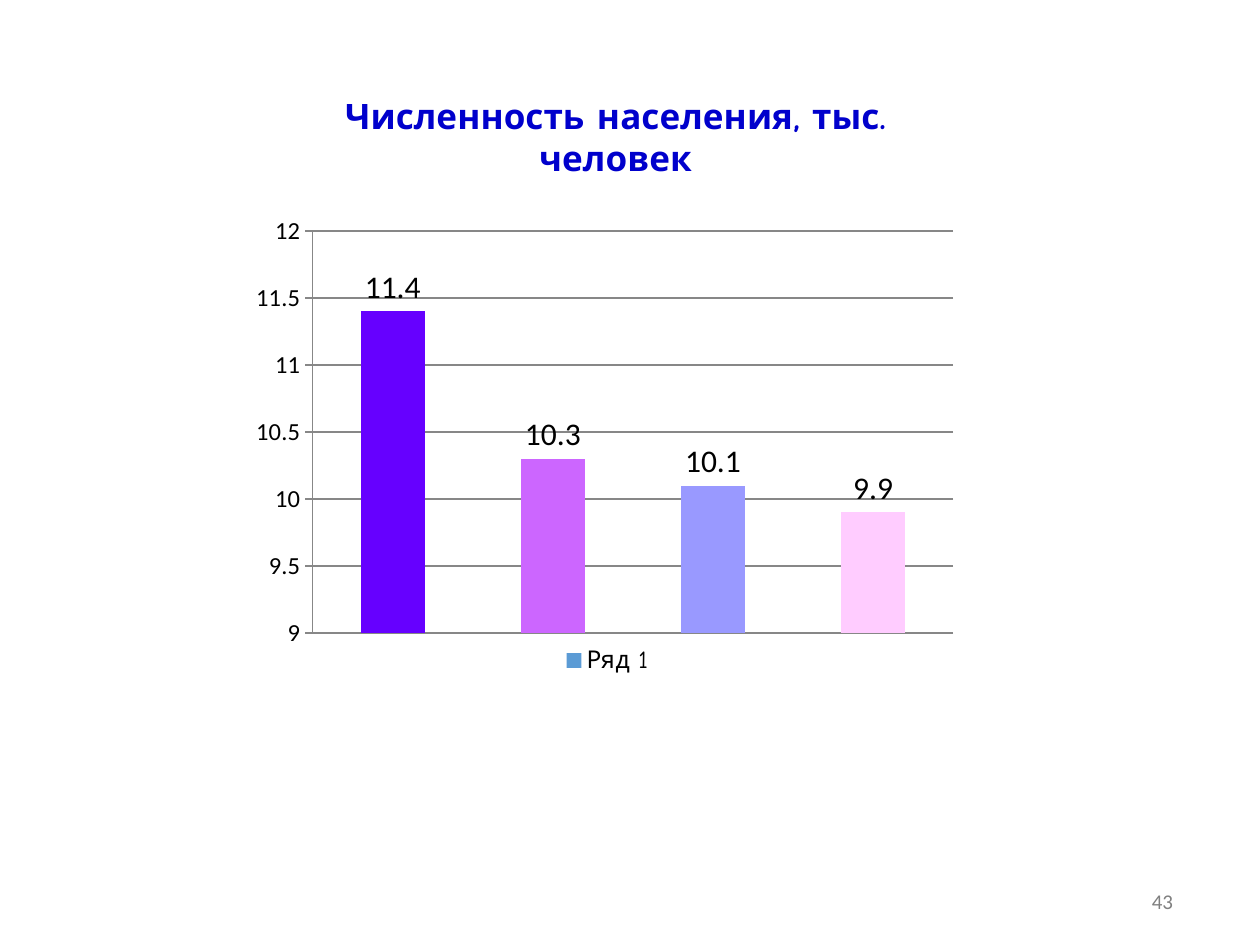
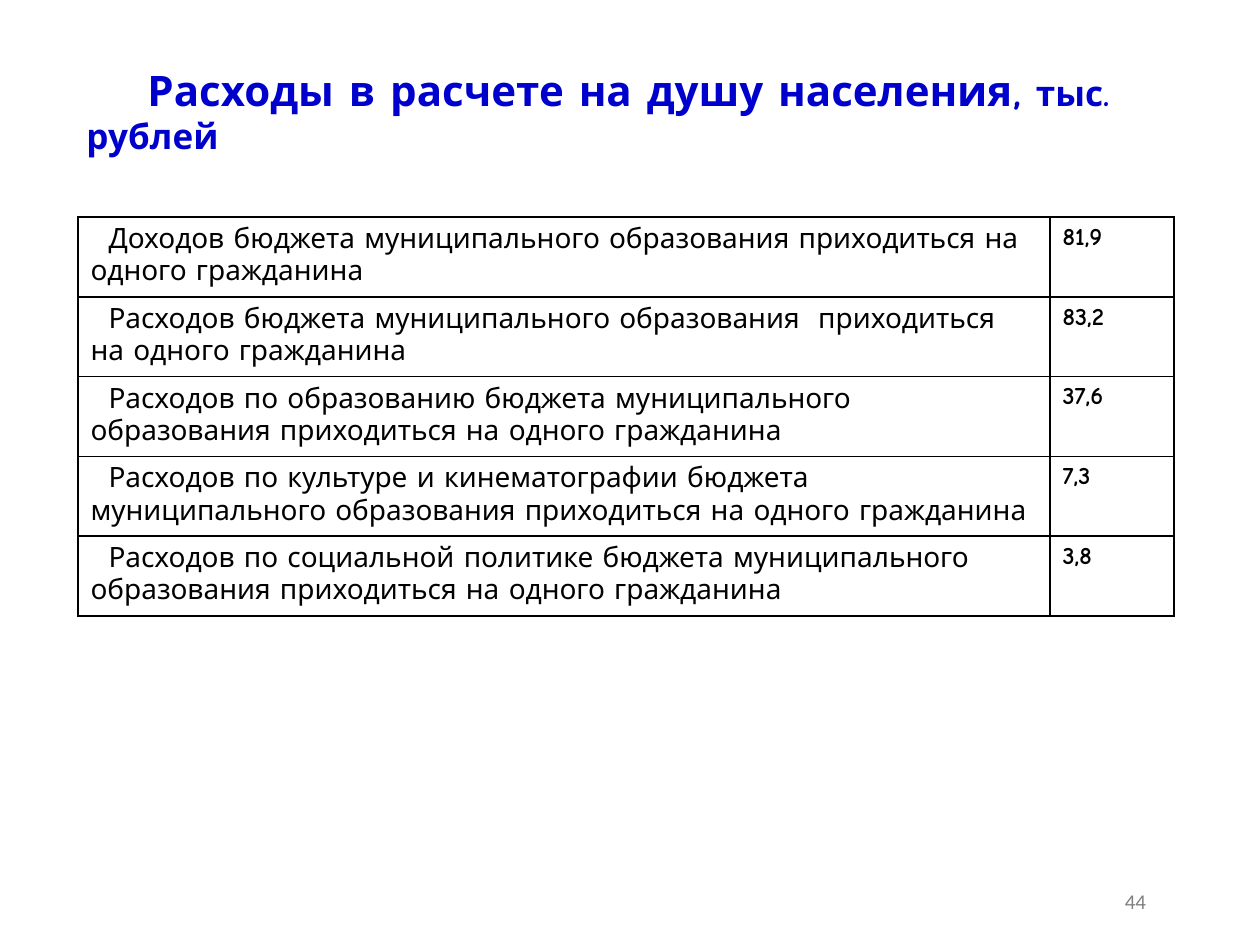
from lxml import etree
from pptx import Presentation
from pptx.chart.data import CategoryChartData
from pptx.dml.color import RGBColor
from pptx.enum.chart import (XL_CHART_TYPE, XL_LABEL_POSITION,
                             XL_LEGEND_POSITION, XL_TICK_MARK)
from pptx.enum.text import MSO_ANCHOR, PP_ALIGN
from pptx.oxml.ns import qn
from pptx.util import Pt

COLUMNS = XL_CHART_TYPE.COLUMN_CLUSTERED
LABEL_ABOVE = XL_LABEL_POSITION.OUTSIDE_END
LEGEND_BELOW = XL_LEGEND_POSITION.BOTTOM
TICK_CROSS = XL_TICK_MARK.CROSS
TOP, MIDDLE = MSO_ANCHOR.TOP, MSO_ANCHOR.MIDDLE
LEFT, CENTER, RIGHT = PP_ALIGN.LEFT, PP_ALIGN.CENTER, PP_ALIGN.RIGHT

# Shared style
PX = 914400 / 126
TITLE_FONT, BODY_FONT = "Comic Neue", "Calibri"
TITLE_BLUE, BLACK, GRAY, GRID_GRAY = "0000CC", "000000", "808080", "878787"
LEGEND_BLUE = "5B9BD5"

# Slide content
POPULATION = [(11.4, "6600FF"), (10.3, "CC66FF"), (10.1, "9999FF"), (9.9, "FFCCFF")]
PER_CITIZEN = [
    ("Доходов бюджета муниципального образования приходиться на одного гражданина", "81,9"),
    ("Расходов бюджета муниципального образования  приходиться на одного гражданина", "83,2"),
    ("Расходов по образованию бюджета муниципального образования "
     "приходиться на одного гражданина", "37,6"),
    ("Расходов по культуре и кинематографии бюджета муниципального образования "
     "приходиться на одного гражданина", "7,3"),
    ("Расходов по социальной политике бюджета муниципального образования "
     "приходиться на одного гражданина", "3,8"),
]


def px(length):
    return round(length * PX)


def color(value):
    return RGBColor.from_string(value)


def style_font(font, size, name, value, bold=False):
    font.size, font.name, font.bold = Pt(size), name, bold
    font.color.rgb = color(value)


def add_span(para, text, size, name=TITLE_FONT, value=BLACK, bold=False):
    span = para.add_run()
    span.text = text
    style_font(span.font, size, name, value, bold)


def indent_first_line(para, length):
    para._p.get_or_add_pPr().set("indent", str(px(length)))


def add_text(page, box, align=LEFT, anchor=TOP):
    """Add a wrapping text box and return its frame and first paragraph."""
    frame = page.shapes.add_textbox(*map(px, box)).text_frame
    frame.word_wrap, frame.vertical_anchor = True, anchor
    para = frame.paragraphs[0]
    para.alignment = align
    return frame, para


def add_title(page, box, spans, align=LEFT, indent=0):
    para = add_text(page, box, align)[1]
    indent_first_line(para, indent)
    for text, size in spans:
        add_span(para, text, size, value=TITLE_BLUE, bold=True)


def add_page_number(page, number, right):
    width = 284
    frame, para = add_text(page, (right - width, 876, width, 50), RIGHT, MIDDLE)
    frame.margin_left = frame.margin_right = 0
    add_span(para, str(number), 12, BODY_FONT, GRAY)


def set_layout(parent, index, **fractions):
    """Place a chart part by fractions of the chart area."""
    for old in parent.findall(qn("c:layout")):
        parent.remove(old)
    layout = etree.Element(qn("c:layout"))
    manual = etree.SubElement(layout, qn("c:manualLayout"))
    if "w" in fractions:
        etree.SubElement(manual, qn("c:layoutTarget"), val="inner")
    for mode in ("xMode", "yMode"):
        etree.SubElement(manual, qn(f"c:{mode}"), val="edge")
    for key, fraction in fractions.items():
        etree.SubElement(manual, qn(f"c:{key}"), val=str(fraction))
    parent.insert(index, layout)


def add_population_chart(page, box):
    data = CategoryChartData()
    data.categories = [str(number + 1) for number in range(len(POPULATION))]
    data.add_series("Ряд 1", [value for value, _ in POPULATION])
    chart = page.shapes.add_chart(COLUMNS, *map(px, box), data).chart
    chart.has_title = False
    style_font(chart.font, 18, BODY_FONT, BLACK)

    # Axes
    chart.category_axis.visible = False
    axis = chart.value_axis
    axis.minimum_scale, axis.maximum_scale, axis.major_unit = 9, 12, 0.5
    axis.major_tick_mark = TICK_CROSS
    axis.has_major_gridlines = True
    style_font(axis.tick_labels.font, 14, BODY_FONT, BLACK)
    for line in (axis.format.line, axis.major_gridlines.format.line):
        line.color.rgb = color(GRID_GRAY)
        line.width = Pt(0.75)

    # Columns and their labels
    plot = chart.plots[0]
    plot.gap_width, plot.vary_by_categories = 150, False
    series = plot.series[0]
    series.format.fill.solid()
    series.format.fill.fore_color.rgb = color(LEGEND_BLUE)
    for index, (_, fill_color) in enumerate(POPULATION):
        fill = series.points[index].format.fill
        fill.solid()
        fill.fore_color.rgb = color(fill_color)
    plot.has_data_labels = True
    labels = plot.data_labels
    labels.show_value, labels.position = True, LABEL_ABOVE
    style_font(labels.font, 18, BODY_FONT, BLACK)

    # Legend and plot position
    chart.has_legend = True
    legend = chart.legend
    legend.position, legend.include_in_layout = LEGEND_BELOW, False
    style_font(legend.font, 14, TITLE_FONT, BLACK)
    set_layout(legend._element, 1, x=0.42, y=0.74)
    set_layout(chart._chartSpace.chart.plotArea, 0, x=0.175, y=0.073, w=0.638, h=0.654)


def outline_cell(cell):
    properties = cell._tc.get_or_add_tcPr()
    for index, side in enumerate(("lnL", "lnR", "lnT", "lnB")):
        line = etree.Element(qn(f"a:{side}"), w=str(Pt(1)))
        fill = etree.SubElement(line, qn("a:solidFill"))
        etree.SubElement(fill, qn("a:srgbClr"), val=BLACK)
        properties.insert(index, line)


def add_expense_table(page, box):
    left, top, width, height = box
    value_width = 124
    table = page.shapes.add_table(len(PER_CITIZEN), 2, *map(px, box)).table
    table.first_row = table.horz_banding = False
    table.columns[0].width = px(width - value_width)
    table.columns[1].width = px(value_width)
    for row, (label, value) in zip(table.rows, PER_CITIZEN):
        row.height = px(height / len(PER_CITIZEN))
        for cell in row.cells:
            cell.fill.background()
            outline_cell(cell)
        label_para, value_para = (cell.text_frame.paragraphs[0] for cell in row.cells)
        indent_first_line(label_para, 18)
        add_span(label_para, label, 16)
        add_span(value_para, value, 14, bold=True)


def build_population_page(page):
    add_page_number(page, 43, right=1173)
    add_title(page, (266, 88, 699, 97), [("Численность населения, тыс. человек", 20)], CENTER)
    add_population_chart(page, (137, 186, 1004, 615))


def build_expense_page(page):
    add_expense_table(page, (78, 217, 1096, 385))
    add_title(page, (74, 58, 1072, 149),
              [("Расходы в расчете на душу населения, ", 24), ("тыс. рублей", 20)], indent=61)
    add_page_number(page, 44, right=1146)


def main():
    deck = Presentation()
    deck.slide_width, deck.slide_height = px(1260), px(945)
    for build in (build_population_page, build_expense_page):
        build(deck.slides.add_slide(deck.slide_layouts[6]))
    deck.save("out.pptx")


if __name__ == "__main__":
    main()
